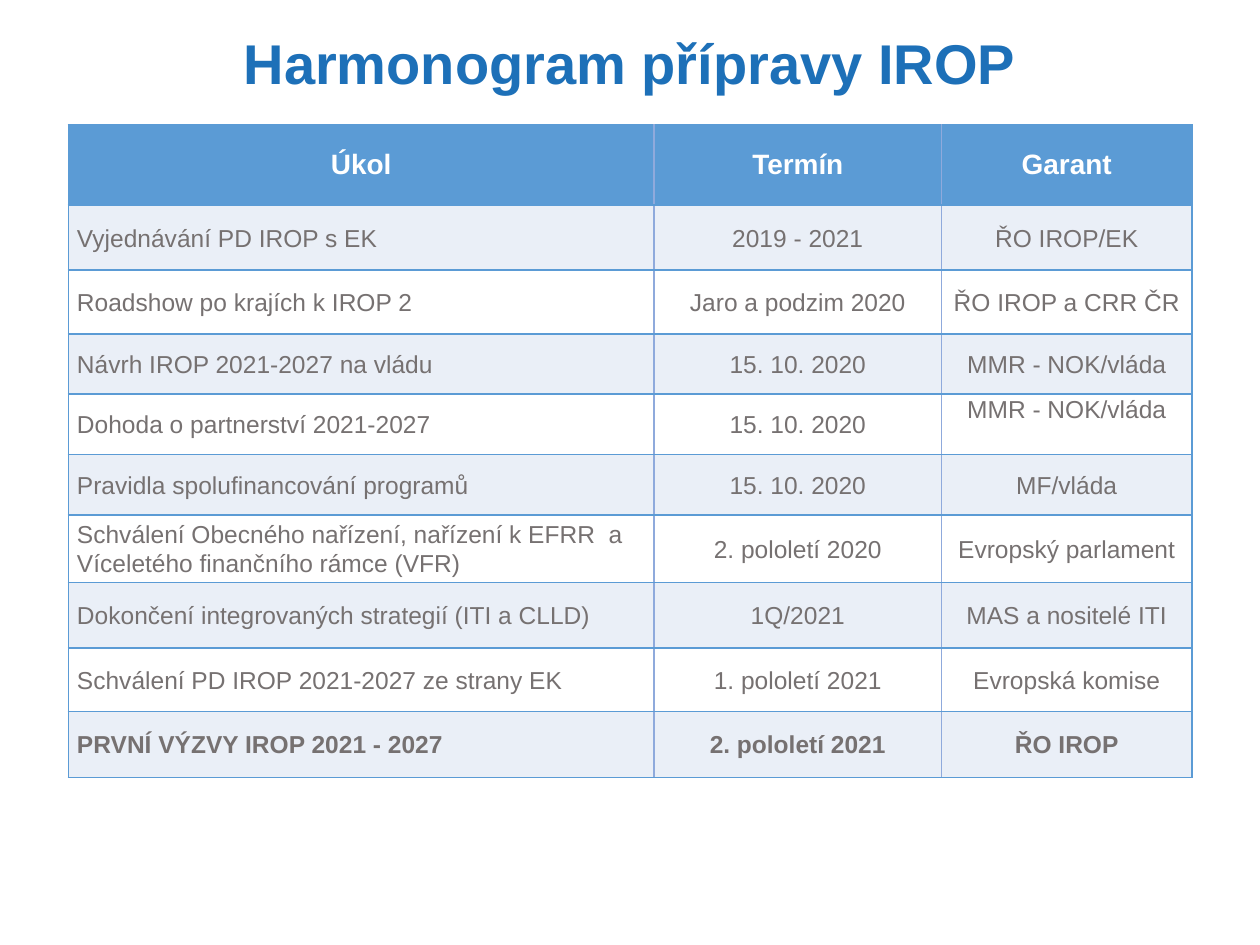
from lxml import etree
from pptx import Presentation
from pptx import util as u
from pptx.dml import color
from pptx.enum import text
from pptx.oxml import ns

FONT = "Arial"
BLUE = "5B9BD5"
DIVIDER = "8FAADC"
GREY = "767171"
WHITE = "FFFFFF"
BAND = "EAEFF7"
COLUMN_WIDTHS = [334.8, 164.2, 143.2]
ROW_HEIGHTS = [46, 37, 36.5, 34.5, 34.5, 34.5, 38.5, 37.5, 36.5, 37.5]
SCHEDULE = [
    ("Úkol", "Termín", "Garant"),
    ("Vyjednávání PD IROP s EK", "2019 - 2021", "ŘO IROP/EK"),
    ("Roadshow po krajích k IROP 2", "Jaro a podzim 2020", "ŘO IROP a CRR ČR"),
    ("Návrh IROP 2021-2027 na vládu", "15. 10. 2020", "MMR - NOK/vláda"),
    ("Dohoda o partnerství 2021-2027", "15. 10. 2020", "MMR - NOK/vláda"),
    ("Pravidla spolufinancování programů", "15. 10. 2020", "MF/vláda"),
    ("Schválení Obecného nařízení, nařízení k EFRR  a Víceletého finančního rámce (VFR)",
     "2. pololetí 2020", "Evropský parlament"),
    ("Dokončení integrovaných strategií (ITI a CLLD)", "1Q/2021", "MAS a nositelé ITI"),
    ("Schválení PD IROP 2021-2027 ze strany EK", "1. pololetí 2021", "Evropská komise"),
    ("PRVNÍ VÝZVY IROP 2021 - 2027", "2. pololetí 2021", "ŘO IROP"),
]


def rgb(value):
    return color.RGBColor.from_string(value)


def format_paragraph(paragraph, size, colour, bold, centred=True, spacing=1.0):
    paragraph.alignment = text.PP_ALIGN.CENTER if centred else text.PP_ALIGN.LEFT
    paragraph.line_spacing = spacing
    for run in paragraph.runs:
        run.font.name = FONT
        run.font.size = u.Pt(size)
        run.font.bold = bold
        run.font.color.rgb = rgb(colour)


def add_title(slide, wording):
    shape = slide.shapes.add_textbox(u.Pt(49.5), u.Pt(4.5), u.Pt(621), u.Pt(98.5))
    frame = shape.text_frame
    frame.word_wrap = True
    frame.vertical_anchor = text.MSO_ANCHOR.TOP
    frame.margin_top = u.Pt(16)
    frame.text = wording
    format_paragraph(frame.paragraphs[0], 32, "1D70B8", True, spacing=0.9)


def set_borders(cell, **colours):
    properties = cell._tc.get_or_add_tcPr()
    for position, side in enumerate("LRTB"):
        line = etree.Element(ns.qn(f"a:ln{side}"), w=str(u.Pt(1)))
        fill = etree.SubElement(line, ns.qn("a:solidFill"))
        etree.SubElement(fill, ns.qn("a:srgbClr"), val=colours.get(side, BLUE))
        properties.insert(position, line)


def fill_cell(cell, wording, row, column):
    header = row == 0
    last_row = row == len(SCHEDULE) - 1
    cell.text = wording
    cell.vertical_anchor = text.MSO_ANCHOR.MIDDLE
    cell.margin_left = cell.margin_right = u.Pt(5)
    cell.margin_top = cell.margin_bottom = 0
    cell.fill.solid()
    cell.fill.fore_color.rgb = rgb(BLUE if header else BAND if row % 2 else WHITE)
    format_paragraph(cell.text_frame.paragraphs[0], 16 if header else 14,
                     WHITE if header else GREY, header or last_row,
                     centred=header or column > 0, spacing=1.0 if header else 1.07)
    set_borders(cell, L=DIVIDER if column > 0 else BLUE,
                R=DIVIDER if column < len(COLUMN_WIDTHS) - 1 else BLUE)


def add_schedule(slide):
    shape = slide.shapes.add_table(len(SCHEDULE), len(COLUMN_WIDTHS), u.Pt(39), u.Pt(71.3),
                                   u.Pt(sum(COLUMN_WIDTHS)), u.Pt(sum(ROW_HEIGHTS)))
    table = shape.table
    table.horz_banding = False
    for column, width in zip(table.columns, COLUMN_WIDTHS):
        column.width = u.Pt(width)
    for row, height in zip(table.rows, ROW_HEIGHTS):
        row.height = u.Pt(height)
    for row, entries in enumerate(SCHEDULE):
        for column, wording in enumerate(entries):
            fill_cell(table.cell(row, column), wording, row, column)
    table.cell(4, 2).vertical_anchor = text.MSO_ANCHOR.TOP


def main():
    presentation = Presentation()
    presentation.slide_width = u.Pt(720)
    presentation.slide_height = u.Pt(540)
    slide = presentation.slides.add_slide(presentation.slide_layouts[6])
    add_title(slide, "Harmonogram přípravy IROP")
    add_schedule(slide)
    presentation.save("out.pptx")


if __name__ == "__main__":
    main()
